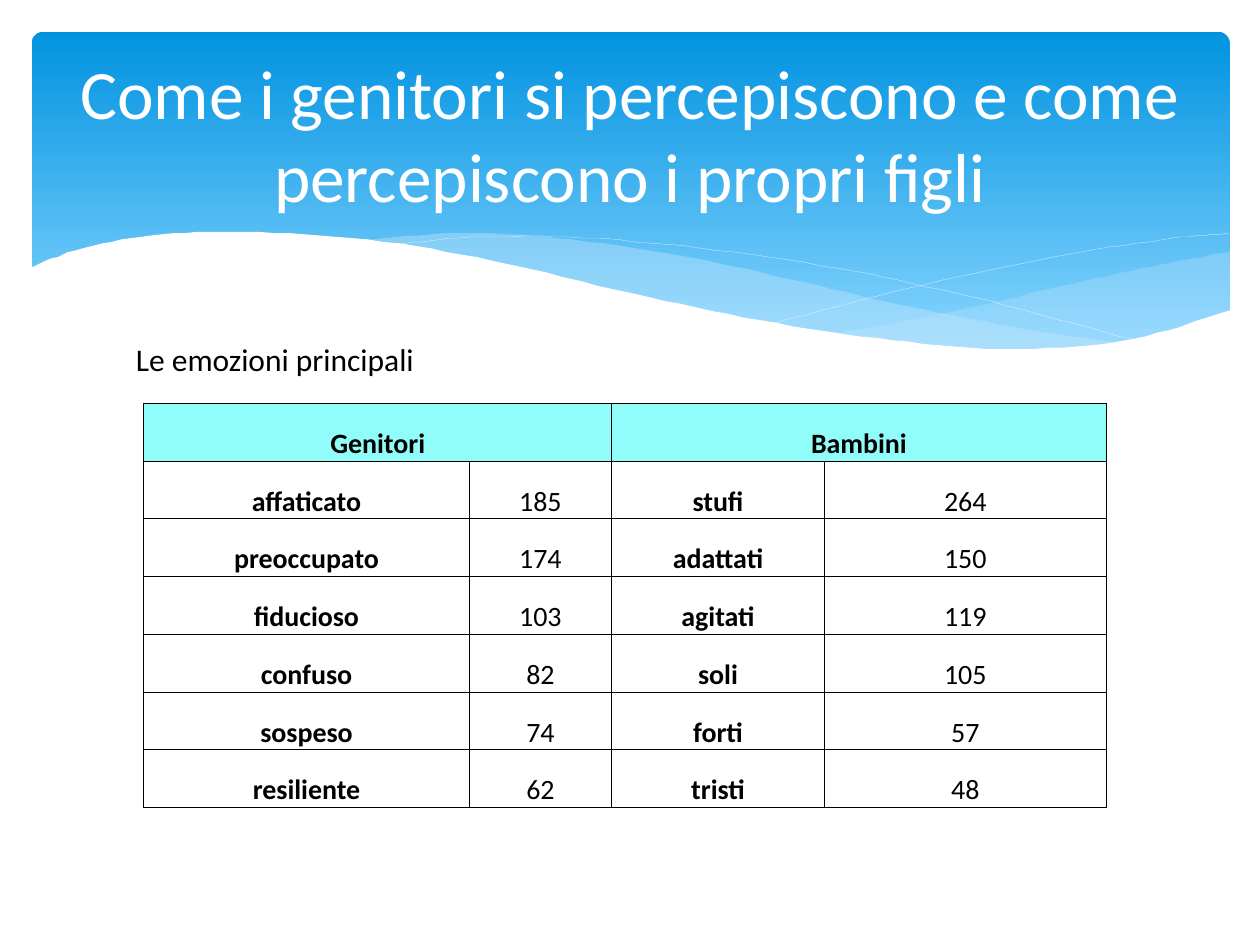
"""Build a slide comparing the main emotions of parents and children."""
from lxml.etree import SubElement
from pptx import Presentation
from pptx.dml.color import RGBColor
from pptx.enum.shapes import MSO_SHAPE
from pptx.enum.text import MSO_ANCHOR, MSO_AUTO_SIZE, PP_ALIGN
from pptx.oxml import parse_xml
from pptx.oxml.ns import nsdecls, qn
from pptx.util import Cm, Pt

HUES = {"top": "0293E0", "low": "83D3FE", "wave": "C6E7FC",
        "white": "FFFFFF", "black": "000000", "head": "91FDFA"}
INK = {name: RGBColor.from_string(hue) for name, hue in HUES.items()}
UNIT = Cm(0.0254)
STEPS = 8


def smooth(knots):
    """Join knots, ordered by x, with cubic arcs that share their slopes."""
    last = len(knots) - 1
    slopes = []
    for i in range(last + 1):
        (xa, ya), (xb, yb) = knots[max(i - 1, 0)], knots[min(i + 1, last)]
        slopes.append((yb - ya) / (xb - xa))
    points = [knots[0]]
    for i in range(last):
        (xa, ya), (xb, yb) = knots[i], knots[i + 1]
        span = xb - xa
        for step in range(1, STEPS + 1):
            t = step / STEPS
            ease = t * t * (3 - 2 * t)
            bend = t * (1 - t) * ((1 - t) * slopes[i] - t * slopes[i + 1])
            points.append((xa + span * t, ya + (yb - ya) * ease + span * bend))
    return points


def trace(points, fill=None):
    """Draw a filled outline, or an open thin line when there is no fill."""
    pen = shapes.build_freeform(*points[0], scale=UNIT)
    pen.add_line_segments(points[1:], close=fill is not None)
    shape = pen.convert_to_shape()
    shape.shadow.inherit = False
    if fill:
        shape.fill.solid()
        shape.fill.fore_color.rgb = INK[fill]
        shape.line.fill.background()
    else:
        shape.fill.background()
        shape.line.color.rgb = INK["white"]
        shape.line.width = Pt(0.1)
    return shape


prs = Presentation()
prs.slide_width, prs.slide_height = Cm(25.4), Cm(19.05)
slide = prs.slides.add_slide(prs.slide_layouts[5])
shapes = slide.shapes

band = shapes.add_shape(MSO_SHAPE.ROUNDED_RECTANGLE,
                        Cm(0.64), Cm(0.64), Cm(24.15), Cm(6.86))
band.adjustments[0] = 0.034
band.shadow.inherit = False
band.line.fill.background()
band.fill.gradient()
band.fill.gradient_angle = 270
for stop, name, spot in zip(band.fill.gradient_stops, ("top", "low"), (0, 0.9)):
    stop.color.rgb = INK[name]
    stop.position = spot

edge = smooth([(23, 213), (59, 199), (119, 187), (193, 184), (292, 190),
               (391, 207), (503, 233), (603, 254), (708, 270), (809, 277),
               (899, 269), (977, 246)])
right = smooth([(661, 265), (753, 248), (861, 223), (921, 210), (976, 200)])
left = smooth([(286, 191), (361, 185), (442, 189), (541, 203), (629, 222),
               (706, 240), (807, 260), (893, 273)])
fall = smooth([(309, 195), (363, 189), (450, 188), (556, 197), (665, 213),
               (760, 233), (831, 251), (907, 272)])
rise = smooth([(613, 257), (720, 229), (836, 204), (924, 190), (975, 185)])

for crest, alpha in ((right, 29), (left, 40)):
    start, end = crest[0][0], crest[-1][0]
    under = [point for point in edge if start < point[0] <= end + 1]
    wave = trace(crest + under[::-1], "wave")
    color = wave.fill._xPr.find(qn("a:solidFill"))[0]
    SubElement(color, qn("a:alpha"), val=str(alpha * 1000))
for strand in (fall, rise):
    trace(strand)
floor = 329
trace(edge + [(edge[-1][0], floor), (edge[0][0], floor)], "white")

rows = [("Genitori", "", "Bambini", ""),
        ("affaticato", "185", "stufi", "264"),
        ("preoccupato", "174", "adattati", "150"),
        ("fiducioso", "103", "agitati", "119"),
        ("confuso", "82", "soli", "105"),
        ("sospeso", "74", "forti", "57"),
        ("resiliente", "62", "tristi", "48")]
widths = (6.56, 2.87, 4.29, 5.68)
table = shapes.add_table(len(rows), len(widths), Cm(2.9), Cm(8.13),
                         Cm(sum(widths)), Cm(8.15)).table
table.first_row = table.horz_banding = False
for col, width in zip(table.columns, widths):
    col.width = Cm(width)
for start in (0, 2):
    table.cell(0, start).merge(table.cell(0, start + 1))

for r, row in enumerate(rows):
    for c, text in enumerate(row):
        cell = table.cell(r, c)
        cell.vertical_anchor = MSO_ANCHOR.BOTTOM
        cell.margin_left = cell.margin_right = cell.margin_top = Cm(0.02)
        cell.margin_bottom = 0
        props = cell._tc.get_or_add_tcPr()
        for side in "LRTB":
            props.append(parse_xml(
                f'<a:ln{side} {nsdecls("a")} w="{Pt(0.5)}"><a:solidFill>'
                f'<a:srgbClr val="{HUES["black"]}"/></a:solidFill></a:ln{side}>'))
        if r == 0:
            cell.fill.solid()
            cell.fill.fore_color.rgb = INK["head"]
        else:
            cell.fill.background()
        para = cell.text_frame.paragraphs[0]
        para.text = text
        para.alignment = PP_ALIGN.CENTER
        para.font.name, para.font.size = "Calibri", Pt(16)
        para.font.bold = c % 2 == 0
        para.font.color.rgb = INK["black"]

title = shapes.title
shapes._spTree.append(title._element)
title.left, title.top, title.width, title.height = Cm(1.27), Cm(0.94), Cm(22.86), Cm(3.48)
title.text = "Come i genitori si percepiscono e come percepiscono i propri figli"
title.text_frame.auto_size = MSO_AUTO_SIZE.NONE
title.text_frame.vertical_anchor = MSO_ANCHOR.MIDDLE

label = shapes.add_textbox(Cm(2.49), Cm(6.73), Cm(20.19), Cm(1.02))
label.text_frame.word_wrap = True
label.text_frame.text = "Le emozioni principali"

for box, size, name, align in ((title, 39.6, "white", PP_ALIGN.CENTER),
                               (label, 18, "black", PP_ALIGN.LEFT)):
    para = box.text_frame.paragraphs[0]
    para.alignment = align
    para.font.name, para.font.size = "Calibri", Pt(size)
    para.font.color.rgb = INK[name]

prs.save("out.pptx")
